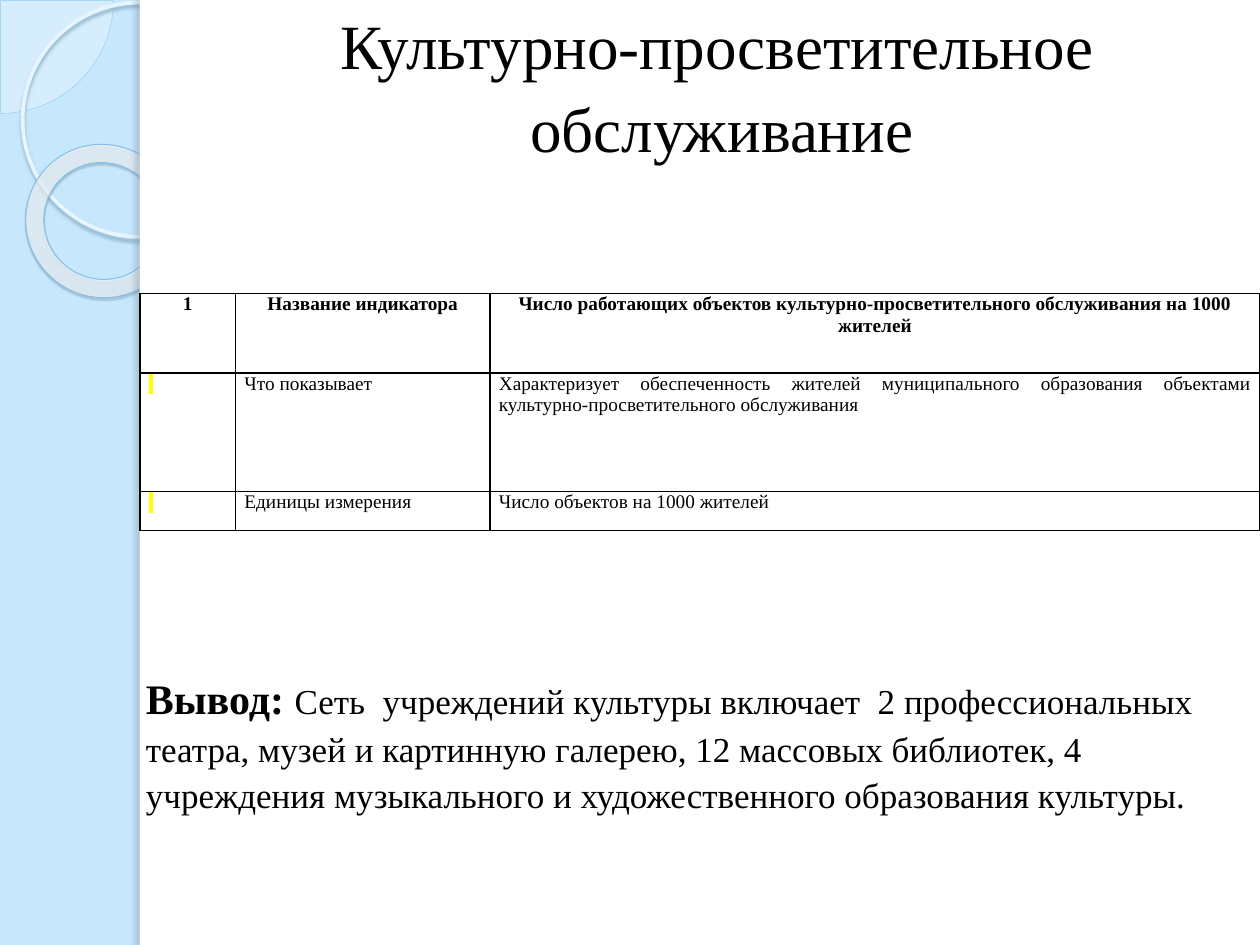
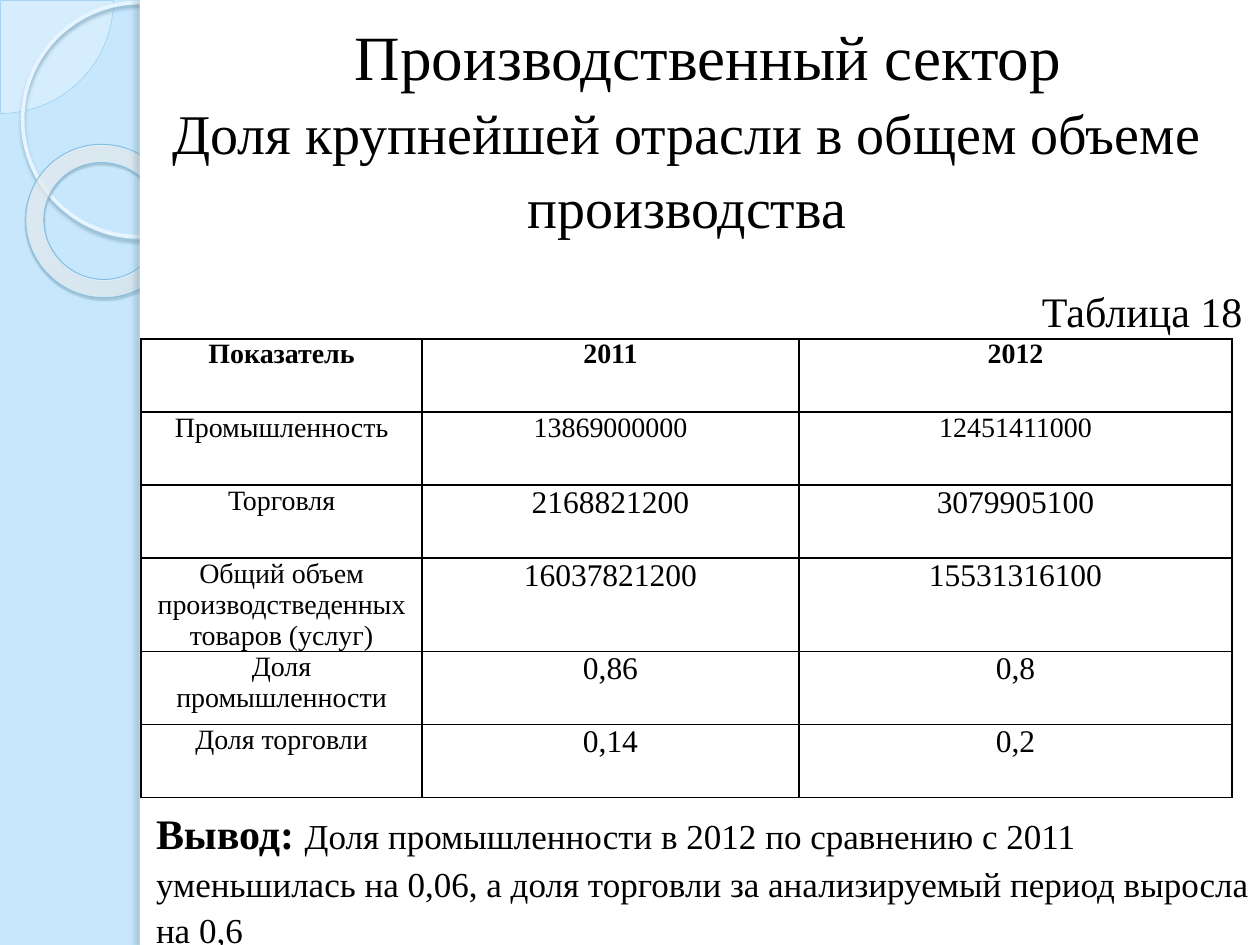
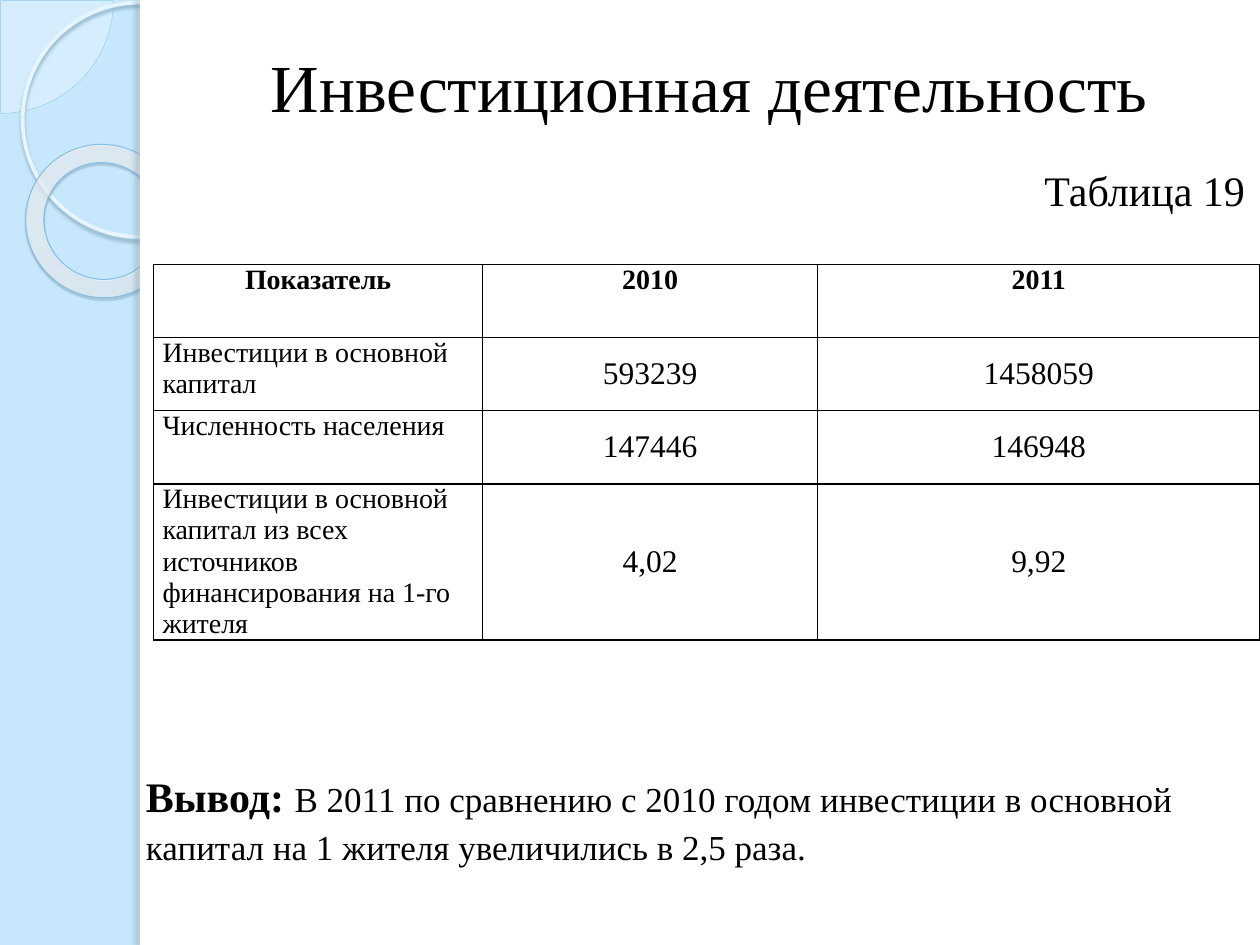
"""Build three slides on cultural services, production and investment."""
from lxml import etree
from pptx import Presentation
from pptx import util as u
from pptx.dml.color import RGBColor
from pptx.enum import shapes, text
from pptx.oxml import parse_xml
from pptx.oxml.ns import nsdecls, qn

FONT = "Times New Roman"
BLACK = RGBColor(0x00, 0x00, 0x00)
WHITE = RGBColor(0xFF, 0xFF, 0xFF)
SKY = RGBColor(0xC6, 0xE7, 0xFC)
PALE = RGBColor(0xF5, 0xFB, 0xFF)
PIE_EDGE = RGBColor(0x92, 0xCB, 0xEF)
RING_EDGE = RGBColor(0xE6, 0xF5, 0xFF)
DONUT_EDGE = RGBColor(0x85, 0xBF, 0xE4)
CIRCLE_SHADE = RGBColor(0x88, 0xAD, 0xC4)
DONUT_SHADE = RGBColor(0x3F, 0x57, 0x67)
PANEL_SHADE = RGBColor(0x61, 0x73, 0x7F)
YELLOW = RGBColor(0xFF, 0xFF, 0x00)

LINE_SPACING = 1.1
PANEL_LEFT = 1.11
DONUT_STOPS = [(0, "F8FCFF", 70), (70, "FCFEFF", 55), (100, "8ED3FF", 60)]
KIND = shapes.MSO_SHAPE
LEFT, CENTER, JUSTIFY = text.PP_ALIGN.LEFT, text.PP_ALIGN.CENTER, text.PP_ALIGN.JUSTIFY
TOP, MIDDLE = text.MSO_ANCHOR.TOP, text.MSO_ANCHOR.MIDDLE

DECOR = [
    dict(kind=KIND.PIE, at=(-0.89, -0.89, 1.79, 1.79), adjust=(0, 54),
         fill=PALE, alpha=33, line=(PIE_EDGE, 0.25)),
    dict(kind=KIND.OVAL, at=(0.18, 0.02, 1.86, 1.86), line=(RING_EDGE, 2.15),
         shadow=(CIRCLE_SHADE, 85, 2, 2, 90)),
    dict(kind=KIND.DONUT, at=(0.2, 1.15, 1.23, 1.21), adjust=(0.12,), rotation=38.6,
         stops=DONUT_STOPS, line=(DONUT_EDGE, 0.58), shadow=(DONUT_SHADE, 35, 1, 1.2, 75)),
    dict(kind=KIND.RECTANGLE, at=(PANEL_LEFT, 0, 8.89, 7.5), fill=WHITE),
    dict(kind=KIND.RECTANGLE, at=(PANEL_LEFT, 0, 0.08, 7.5), fill=WHITE,
         shadow=(PANEL_SHADE, 25, 3, 3, 180)),
]

SLIDES = [
    dict(
        title=" Культурно-просветительное обслуживание", title_at=(1.68, 0.28), title_size=36,
        table_at=(1.11, 2.33), columns=(0.76, 2.02, 6.11), row_heights=(0.63, 0.94, 0.31),
        sizes=(11, 11, 11), aligns=(LEFT, LEFT, JUSTIFY), value_anchor=TOP,
        rows=[
            ("1", "Название индикатора",
             "Число работающих объектов культурно-просветительного обслуживания на 1000 жителей"),
            (" ", "Что показывает",
             "Характеризует обеспеченность жителей муниципального образования объектами "
             "культурно-просветительного обслуживания"),
            (" ", "Единицы измерения", "Число объектов на 1000 жителей"),
        ],
        conclusion="Сеть  учреждений культуры включает  2 профессиональных театра, музей и "
                   "картинную галерею, 12 массовых библиотек, 4 учреждения музыкального и "
                   "художественного образования культуры.",
        conclusion_at=(1.06, 5.25, 8.74, 1.18),
    ),
    dict(
        title="Производственный сектор", title_at=(1.67, 0.04), title_size=36,
        table_at=(1.12, 2.69), columns=(2.23, 2.99, 3.44),
        row_heights=(0.58, 0.58, 0.58, 0.74, 0.58, 0.58),
        sizes=(16, 18, 18), aligns=(CENTER, CENTER, CENTER), value_anchor=TOP, small_rows=(1,),
        rows=[
            ("Показатель", "2011", "2012"),
            ("Промышленность", "13869000000", "12451411000"),
            ("Торговля", "2168821200", "3079905100"),
            ("Общий объем производстведенных товаров (услуг)", "16037821200", "15531316100"),
            ("Доля промышленности", "0,86", "0,8"),
            ("Доля торговли", "0,14", "0,2"),
        ],
        subtitle="Доля крупнейшей отрасли в общем объеме производства",
        subtitle_at=(0.94, 0.68, 9.02, 1.18),
        caption="Таблица 18", caption_at=(8.17, 2.18, 1.81, 0.5),
        conclusion="Доля промышленности в 2012 по сравнению с 2011 уменьшилась на 0,06, а доля "
                   "торговли за анализируемый период выросла на 0,6",
        conclusion_at=(1.14, 6.02, 9.06, 1.48), conclusion_top=0.35,
    ),
    dict(
        title="Инвестиционная деятельность", title_at=(1.68, 0.28), title_size=38.4,
        table_at=(1.22, 2.1), columns=(2.61, 2.66, 3.51), row_heights=(0.58, 0.58, 0.58, 1.24),
        sizes=(16, 18, 18), aligns=(LEFT, CENTER, CENTER), value_anchor=MIDDLE,
        rows=[
            ("Показатель", "2010", "2011"),
            ("Инвестиции в основной капитал", "593239", "1458059"),
            ("Численность населения", "147446", "146948"),
            ("Инвестиции в основной капитал из всех источников финансирования на 1-го жителя",
             "4,02", "9,92"),
        ],
        caption="Таблица 19", caption_at=(8.19, 1.22, 1.81, 0.5),
        conclusion="В 2011 по сравнению с 2010 годом инвестиции в основной капитал на 1 жителя "
                   "увеличились в 2,5 раза.",
        conclusion_at=(1.06, 6.03, 8.94, 0.84),
    ),
]


def inches(lengths):
    return [u.Inches(length) for length in lengths]


def style_run(run, size, bold=False):
    run.font.size = u.Pt(size)
    run.font.bold = bold
    run.font.color.rgb = BLACK
    run.font.name = FONT


def add_shadow(shape, color, alpha, blur, distance, angle):
    effects = shape.element.spPr.find(qn("a:effectLst"))
    effects.append(parse_xml(
        f'<a:outerShdw {nsdecls("a")} blurRad="{u.Pt(blur)}" dist="{u.Pt(distance)}" '
        f'dir="{angle * 60000}" algn="tl" rotWithShape="0"><a:srgbClr val="{color}">'
        f'<a:alpha val="{alpha * 1000}"/></a:srgbClr></a:outerShdw>'))


def fill_decor(shape, part):
    if "fill" not in part and "stops" not in part:
        shape.fill.background()
        return
    shape.fill.solid()
    shape.fill.fore_color.rgb = part.get("fill", WHITE)
    solid = shape.element.spPr.find(qn("a:solidFill"))
    if "alpha" in part:
        etree.SubElement(solid[0], qn("a:alpha"), val=str(part["alpha"] * 1000))
    if "stops" in part:
        stops = "".join(
            f'<a:gs pos="{place * 1000}"><a:srgbClr val="{color}">'
            f'<a:alpha val="{alpha * 1000}"/></a:srgbClr></a:gs>'
            for place, color, alpha in part["stops"])
        shape.element.spPr.replace(solid, parse_xml(
            f'<a:gradFill {nsdecls("a")} rotWithShape="1"><a:gsLst>{stops}</a:gsLst>'
            '<a:path path="circle"><a:fillToRect l="-408000" t="-50000" r="508000" b="150000"/>'
            '</a:path></a:gradFill>'))


def decorate_layout(layout, slide):
    layout.background.fill.solid()
    layout.background.fill.fore_color.rgb = SKY
    for order, part in enumerate(DECOR):
        shape = slide.shapes.add_shape(part["kind"], *inches(part["at"]))
        for index, value in enumerate(part.get("adjust", ())):
            shape.adjustments[index] = value
        shape.rotation = part.get("rotation", 0)
        fill_decor(shape, part)
        if "line" in part:
            color, width = part["line"]
            shape.line.color.rgb = color
            shape.line.width = u.Pt(width)
        else:
            shape.line.fill.background()
        shape.shadow.inherit = False
        if "shadow" in part:
            add_shadow(shape, *part["shadow"])
        shape.element.nvSpPr.cNvPr.id = 100 + order
        layout.shapes.element.insert(2 + order, shape.element)


def add_title(slide, content):
    title = slide.shapes.title
    title.left, title.top, title.width, title.height = inches((*content["title_at"], 7.71, 0.94))
    frame = title.text_frame
    frame.text = content["title"]
    frame.word_wrap = True
    frame.auto_size = text.MSO_AUTO_SIZE.NONE
    frame.vertical_anchor = MIDDLE
    frame.margin_bottom = u.Inches(0.25)
    heading = frame.paragraphs[0]
    heading.alignment = CENTER
    heading.line_spacing = LINE_SPACING
    properties = heading._p.get_or_add_pPr()
    properties.set("marL", str(u.Inches(0.39)))
    properties.set("indent", str(u.Inches(-0.2)))
    style_run(heading.runs[0], content["title_size"])


def add_text(slide, at, runs, align=LEFT, wrap=True, top=0.05):
    frame = slide.shapes.add_textbox(*inches(at)).text_frame
    frame.word_wrap = wrap
    frame.auto_size = text.MSO_AUTO_SIZE.SHAPE_TO_FIT_TEXT
    frame.margin_top = u.Inches(top)
    paragraph = frame.paragraphs[0]
    paragraph.alignment = align
    paragraph.line_spacing = LINE_SPACING
    for words, size, bold in runs:
        run = paragraph.add_run()
        run.text = words
        style_run(run, size, bold)


def add_borders(cell):
    properties = cell._tc.get_or_add_tcPr()
    for order, side in enumerate(("lnL", "lnR", "lnT", "lnB")):
        properties.insert(order, parse_xml(
            f'<a:{side} {nsdecls("a")} w="{u.Pt(1)}"><a:solidFill><a:srgbClr val="{BLACK}"/>'
            f'</a:solidFill></a:{side}>'))


def highlight(run):
    mark = parse_xml(f'<a:highlight {nsdecls("a")}><a:srgbClr val="{YELLOW}"/></a:highlight>')
    run.font._element.find(qn("a:solidFill")).addnext(mark)


def fill_cell(cell, words, size, align, anchor, header):
    cell.fill.background()
    add_borders(cell)
    cell.margin_left = cell.margin_right = u.Inches(0.07)
    cell.margin_top = cell.margin_bottom = 0
    cell.vertical_anchor = anchor
    cell.text_frame.text = words
    paragraph = cell.text_frame.paragraphs[0]
    paragraph.alignment = align
    if header:
        paragraph.space_before = paragraph.space_after = u.Pt(6)
    style_run(paragraph.runs[0], size, header)
    if not words.strip():
        highlight(paragraph.runs[0])


def add_indicators(slide, content):
    rows, columns, heights = content["rows"], content["columns"], content["row_heights"]
    size = (sum(columns), sum(heights))
    table = slide.shapes.add_table(
        len(rows), len(columns), *inches((*content["table_at"], *size))).table
    table.first_row = table.horz_banding = False
    for column, width in zip(table.columns, columns):
        column.width = u.Inches(width)
    small_rows = (0, *content.get("small_rows", ()))
    for r, row in enumerate(rows):
        table.rows[r].height = u.Inches(heights[r])
        for c, words in enumerate(row):
            header = r == 0
            fill_cell(table.cell(r, c), words,
                      content["sizes"][0 if r in small_rows else c],
                      CENTER if header else content["aligns"][c],
                      TOP if header or c == 0 else content["value_anchor"], header)


def main():
    deck = Presentation()
    deck.slide_width, deck.slide_height = inches((10, 7.5))
    layout = deck.slide_layouts[5]
    for number, content in enumerate(SLIDES):
        slide = deck.slides.add_slide(layout)
        if number == 0:
            decorate_layout(layout, slide)
        add_title(slide, content)
        add_indicators(slide, content)
        if "subtitle" in content:
            add_text(slide, content["subtitle_at"], [(content["subtitle"], 32, False)], CENTER)
        if "caption" in content:
            add_text(slide, content["caption_at"], [(content["caption"], 24, False)], wrap=False)
        add_text(slide, content["conclusion_at"],
                 [("Вывод: ", 24, True), (content["conclusion"], 20, False)],
                 top=content.get("conclusion_top", 0.05))
    deck.save("out.pptx")


if __name__ == "__main__":
    main()
